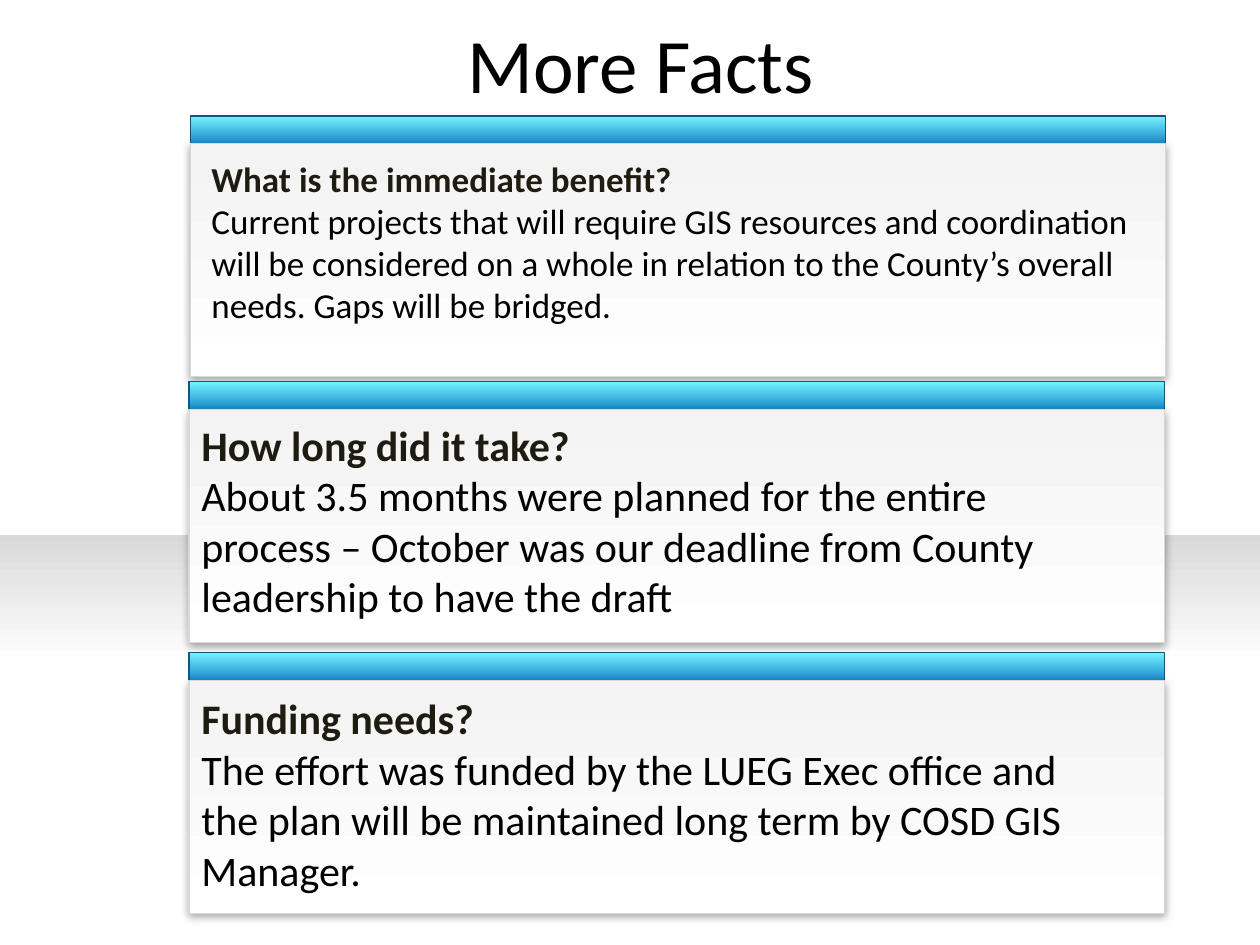
from dataclasses import dataclass

from lxml import etree
from pptx import Presentation
from pptx.dml.color import RGBColor
from pptx.enum.shapes import MSO_SHAPE
from pptx.enum.text import MSO_AUTO_SIZE, PP_ALIGN
from pptx.oxml.ns import qn
from pptx.util import Inches, Pt

RECT = MSO_SHAPE.RECTANGLE
GROW = MSO_AUTO_SIZE.SHAPE_TO_FIT_TEXT
LEFT, CENTER = PP_ALIGN.LEFT, PP_ALIGN.CENTER


@dataclass(frozen=True)
class Theme:
    """Hold the colours, font and type sizes."""
    font: str = "Calibri"
    ink: str = "000000"
    head: str = "1E1C11"
    white: str = "FFFFFF"
    band: str = "D9D9D9"
    panel: str = "F3F3F3"
    edge: str = "D9D9D9"
    bar: tuple = ("74F4FF", "208ECD")
    rim: str = "12557D"
    title: int = 44
    small: int = 20
    large: int = 24


THEME = Theme()

CARDS = [
    ((1.51, 0.92, 7.74, 2.07), (0.07, 0.28, 7.5, 1.45), THEME.small,
     "What is the immediate benefit?",
     "Current projects that will require GIS resources and coordination will be "
     "considered on a whole in relation to the County’s overall needs. "
     "Gaps will be bridged."),
    ((1.5, 3.03, 7.74, 2.07), (0, 0.25, 7.42, 1.72), THEME.large,
     "How long did it take?",
     "About 3.5 months were planned for the entire process – October was our "
     "deadline from County leadership to have the draft"),
    ((1.5, 5.18, 7.74, 2.07), (0, 0.27, 7.42, 1.72), THEME.large,
     "Funding needs?",
     "The effort was funded by the LUEG Exec office and the plan will be "
     "maintained long term by COSD GIS Manager."),
]


def add_rect(shapes, box, top, base, end=1, line=None):
    """Add a rectangle that shades downward from top to base."""
    shape = shapes.add_shape(RECT, *map(Inches, box))
    shape.shadow.inherit = False
    fill = shape.fill
    fill.gradient()
    fill.gradient_angle = 270
    for stop, place, color in zip(fill.gradient_stops, (0, end), (top, base)):
        stop.position = place
        stop.color.rgb = RGBColor.from_string(color)
    if line:
        shape.line.color.rgb = RGBColor.from_string(line)
        shape.line.width = Pt(0.75)
    else:
        shape.line.fill.background()
    return shape


def add_shadow(shape):
    """Cast a soft shadow below a shape."""
    effects = shape.element.spPr.find(qn("a:effectLst"))
    outer = etree.SubElement(effects, qn("a:outerShdw"), blurRad=str(Pt(5)),
                             dist=str(Pt(1.8)), dir="5400000", rotWithShape="0")
    color = etree.SubElement(outer, qn("a:srgbClr"), val=THEME.ink)
    etree.SubElement(color, qn("a:alpha"), val="35000")


def add_text(slide, box, lines, size, align=LEFT):
    """Add a text box with one styled run in each paragraph."""
    frame = slide.shapes.add_textbox(*map(Inches, box)).text_frame
    frame.word_wrap = True
    frame.auto_size = GROW
    for index, (text, color, bold) in enumerate(lines):
        para = frame.add_paragraph() if index else frame.paragraphs[0]
        para.alignment = align
        run = para.add_run()
        run.text = text
        run.font.name = THEME.font
        run.font.size = Pt(size)
        run.font.bold = bold
        run.font.color.rgb = RGBColor.from_string(color)


def add_card(slide, box, inset, size, head, body):
    """Add a panel with a bar on top, a question and its answer."""
    left, top, width, height = box
    group = slide.shapes.add_group_shape().shapes
    add_rect(group, (left, top, width, 0.26), *THEME.bar, end=0.8,
             line=THEME.rim)
    panel = add_rect(group, (left, top + 0.22, width, height - 0.22),
                     THEME.panel, THEME.white, line=THEME.edge)
    add_shadow(panel)
    dx, dy, wide, high = inset
    lines = [(head, THEME.head, True), (body, THEME.ink, False)]
    add_text(slide, (left + dx, top + dy, wide, high), lines, size)


def add_title(slide, box, text):
    """Add the centred slide title."""
    add_text(slide, box, [(text, THEME.ink, False)], THEME.title, CENTER)


def main():
    """Build and save the slide."""
    deck = Presentation()
    deck.slide_width, deck.slide_height = Inches(10), Inches(7.5)
    slide = deck.slides.add_slide(deck.slide_layouts[6])
    add_rect(slide.shapes, (0, 4.25, 10, 2.6), THEME.band, THEME.white, end=0.39)
    for card in CARDS:
        add_card(slide, *card)
    add_title(slide, (3, 0.08, 4.17, 0.84), "More Facts")
    deck.save("out.pptx")


if __name__ == "__main__":
    main()
